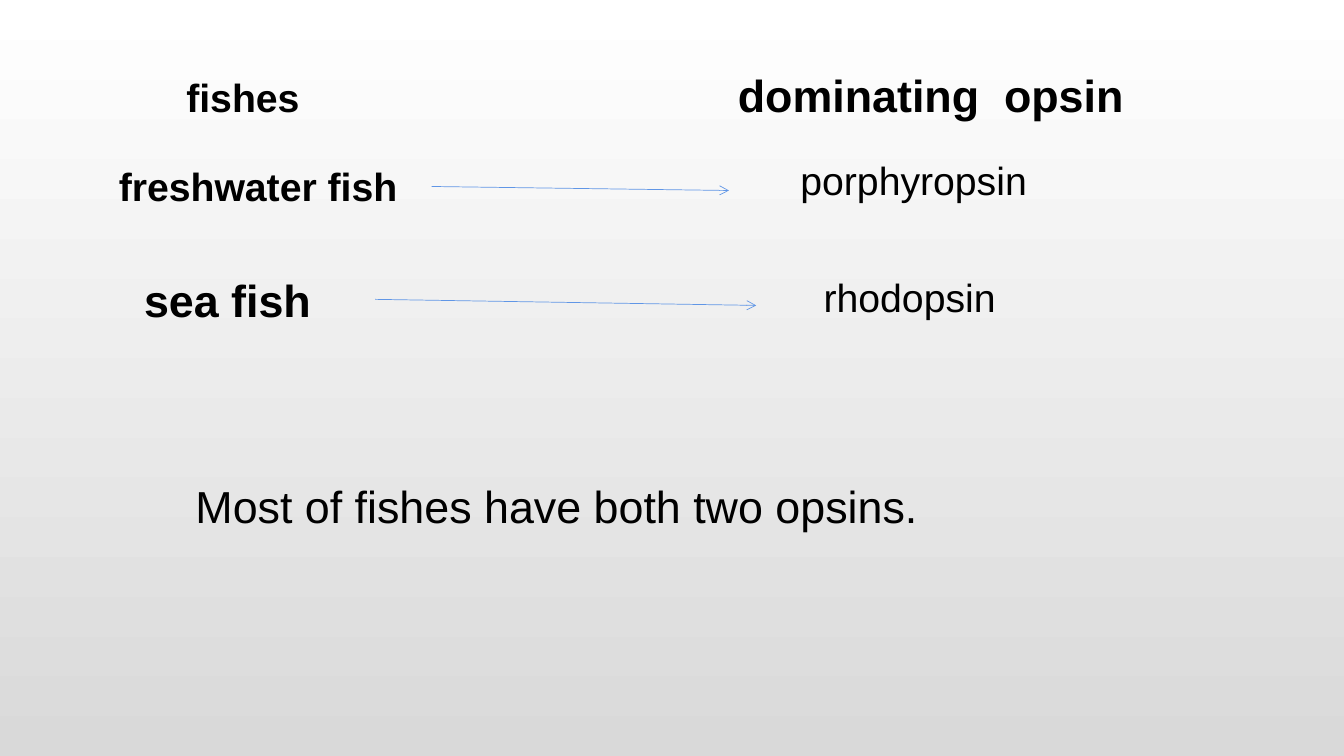
from pptx import Presentation
from pptx.dml.color import RGBColor
from pptx.enum.shapes import MSO_CONNECTOR as Link
from pptx.enum.text import MSO_AUTO_SIZE as Fit
from pptx.oxml.ns import qn
from pptx.util import Inches, Pt
from lxml.etree import SubElement

BLACK = RGBColor(0, 0, 0)
WHITE = RGBColor(255, 255, 255)
GREY = RGBColor(0xD9, 0xD9, 0xD9)
BLUE = RGBColor(0x60, 0x96, 0xE6)
FONT = "Arial"
WIDE, HIGH = 13.33, 7.5

# text, left, top, width, size, bold
TEXTS = [
    ("fishes", 1.75, 0.68, 2.24, 28, True),
    ("dominating  opsin", 7.22, 0.62, 4.38, 32, True),
    ("freshwater fish", 1.08, 1.56, 3.2, 28, True),
    ("porphyropsin", 7.84, 1.5, 4.13, 28, False),
    ("sea fish", 1.33, 2.66, 3.08, 32, True),
    ("rhodopsin", 8.07, 2.66, 3.29, 28, False),
    ("Most of fishes have both two opsins.", 1.84, 4.7, 7.82, 32, False),
]
# start x, start y, end x, end y
ARROWS = [(4.28, 1.85, 7.23, 1.89), (3.72, 2.97, 7.5, 3.03)]
BOX_HIGH = {28: 0.57, 32: 0.64}


def paint_back(slide):
    fill = slide.background.fill
    fill.gradient()
    fill.gradient_angle = 270
    for stop, place, color in zip(fill.gradient_stops, (0, 1), (WHITE, GREY)):
        stop.position = place
        stop.color.rgb = color


def add_text(slide, text, left, top, width, size, bold):
    area = map(Inches, (left, top, width, BOX_HIGH[size]))
    frame = slide.shapes.add_textbox(*area).text_frame
    frame.word_wrap = True
    frame.auto_size = Fit.SHAPE_TO_FIT_TEXT
    frame.text = text
    font = frame.paragraphs[0].runs[0].font
    font.name, font.size, font.bold = FONT, Pt(size), bold
    font.color.rgb = BLACK


def add_arrow(slide, *ends):
    arrow = slide.shapes.add_connector(Link.STRAIGHT, *map(Inches, ends))
    arrow.line.color.rgb = BLUE
    arrow.line.width = Pt(0.5)
    SubElement(arrow.line._get_or_add_ln(), qn("a:tailEnd"), type="arrow")
    SubElement(arrow._element.spPr, qn("a:effectLst"))


def main():
    deck = Presentation()
    deck.slide_width, deck.slide_height = Inches(WIDE), Inches(HIGH)
    slide = deck.slides.add_slide(deck.slide_layouts[6])
    paint_back(slide)
    for item in TEXTS:
        add_text(slide, *item)
    for ends in ARROWS:
        add_arrow(slide, *ends)
    deck.save("out.pptx")


if __name__ == "__main__":
    main()
